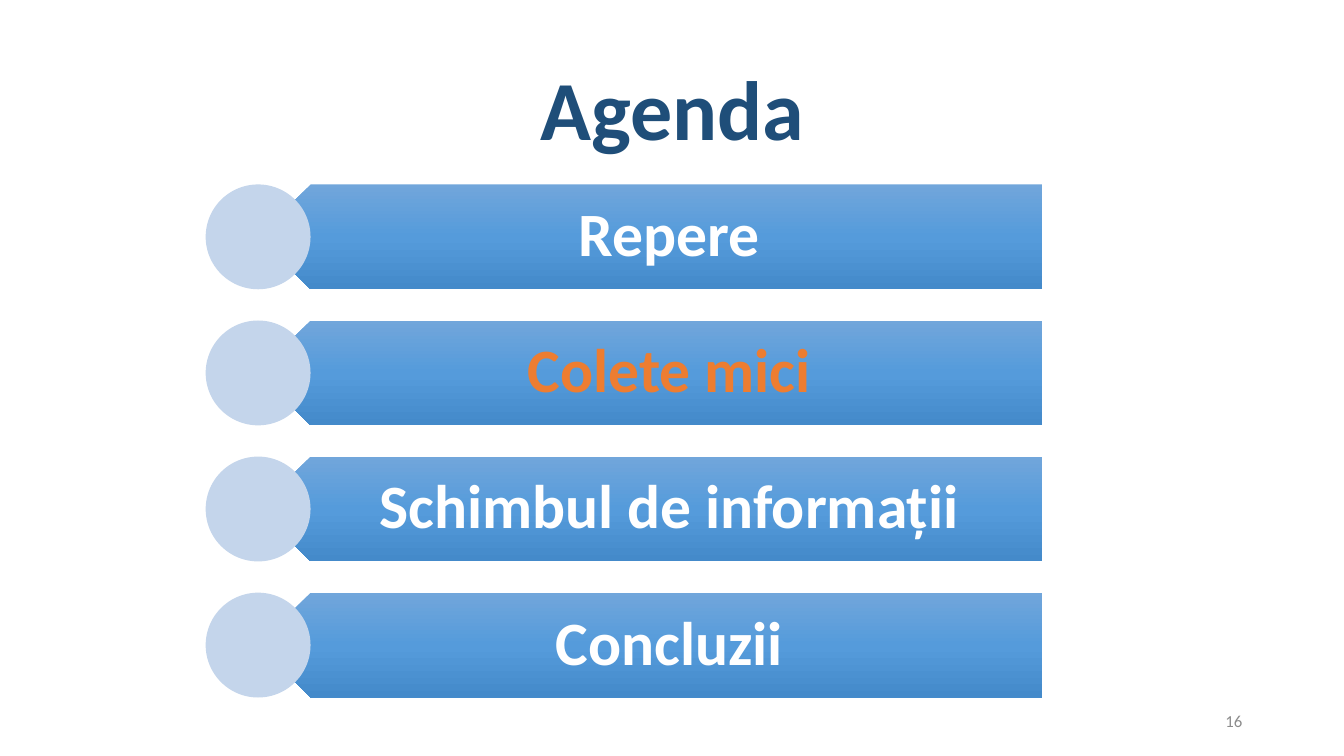
from pptx import Presentation
from pptx.dml.color import RGBColor as Rgb
from pptx.enum.shapes import MSO_SHAPE as Shape
from pptx.enum.text import MSO_ANCHOR as Anchor, PP_ALIGN as Align
from pptx.oxml import parse_xml
from pptx.oxml.ns import nsdecls, qn
from pptx.util import Inches, Pt

COLORS = {
    "title": "1F4E79",
    "number": "8C8C8C",
    "text": "FFFFFF",
    "current": "ED7D31",
    "circle": "C4D5EB",
    "bar_top": "71A6DB",
    "bar_middle": "559BDB",
    "bar_bottom": "448ACA",
}
TOPICS = ["Repere", "Colete mici", "Schimbul de informații", "Concluzii"]
CURRENT_TOPIC = "Colete mici"
FIRST_TOP, STEP, HEIGHT = 1.83, 1.35, 1.04
CIRCLE_LEFT, BAR_LEFT, BAR_WIDTH = 2.04, 2.56, 7.78
LABEL_LEFT, LABEL_WIDTH = 2.82, 7.52
LABEL_INSETS = (0.46, 0.18, 0.34, 0.18)


def write(frame, text, size, color, bold=False, align=Align.CENTER, spacing=None):
    para = frame.paragraphs[0]
    para.alignment = align
    para.line_spacing = spacing
    span = para.add_run()
    span.text = text
    span.font.name = "Calibri"
    span.font.size = Pt(size)
    span.font.bold = bold
    span.font.color.rgb = Rgb.from_string(COLORS[color])


class AgendaSlide:
    def __init__(self, deck):
        self.shapes = deck.slides.add_slide(deck.slide_layouts[6]).shapes

    def text(self, text, left, top, width, height, insets=(0.1, 0.05, 0.1, 0.05), **style):
        box = self.shapes.add_textbox(*map(Inches, (left, top, width, height)))
        frame = box.text_frame
        frame.word_wrap = True
        frame.vertical_anchor = Anchor.MIDDLE
        (frame.margin_left, frame.margin_top,
         frame.margin_right, frame.margin_bottom) = map(Inches, insets)
        write(frame, text, **style)

    def shape(self, kind, left, top, width, height):
        shape = self.shapes.add_shape(kind, *map(Inches, (left, top, width, height)))
        shape.shadow.inherit = False
        shape.line.fill.background()
        return shape

    def bar(self, top):
        bar = self.shape(Shape.PENTAGON, BAR_LEFT, top, BAR_WIDTH, HEIGHT)
        bar.rotation = 180
        stops = "".join(
            f'<a:gs pos="{position}"><a:srgbClr val="{COLORS[name]}"/></a:gs>'
            for position, name in ((0, "bar_top"), (50000, "bar_middle"), (100000, "bar_bottom"))
        )
        gradient = parse_xml(
            f'<a:gradFill {nsdecls("a")} rotWithShape="0"><a:gsLst>{stops}</a:gsLst>'
            '<a:lin ang="5400000" scaled="0"/></a:gradFill>'
        )
        bar.element.spPr.find(qn("a:prstGeom")).addnext(gradient)

    def circle(self, top):
        circle = self.shape(Shape.OVAL, CIRCLE_LEFT, top, HEIGHT, HEIGHT)
        circle.fill.solid()
        circle.fill.fore_color.rgb = Rgb.from_string(COLORS["circle"])

    def topic(self, text, top):
        self.bar(top)
        color = "current" if text == CURRENT_TOPIC else "text"
        self.text(text, LABEL_LEFT, top, LABEL_WIDTH, HEIGHT, insets=LABEL_INSETS,
                  size=44, color=color, bold=True, spacing=0.9)
        self.circle(top)


def main():
    deck = Presentation()
    deck.slide_width, deck.slide_height = Inches(13.33), Inches(7.5)
    page = AgendaSlide(deck)
    page.text("Agenda", 0.92, 0.4, 11.5, 1.45, size=60, color="title", bold=True, spacing=0.9)
    page.text("16", 9.42, 6.95, 3, 0.4, size=12, color="number", align=Align.RIGHT)
    for index, topic in enumerate(TOPICS):
        page.topic(topic, FIRST_TOP + index * STEP)
    deck.save("out.pptx")


if __name__ == "__main__":
    main()
